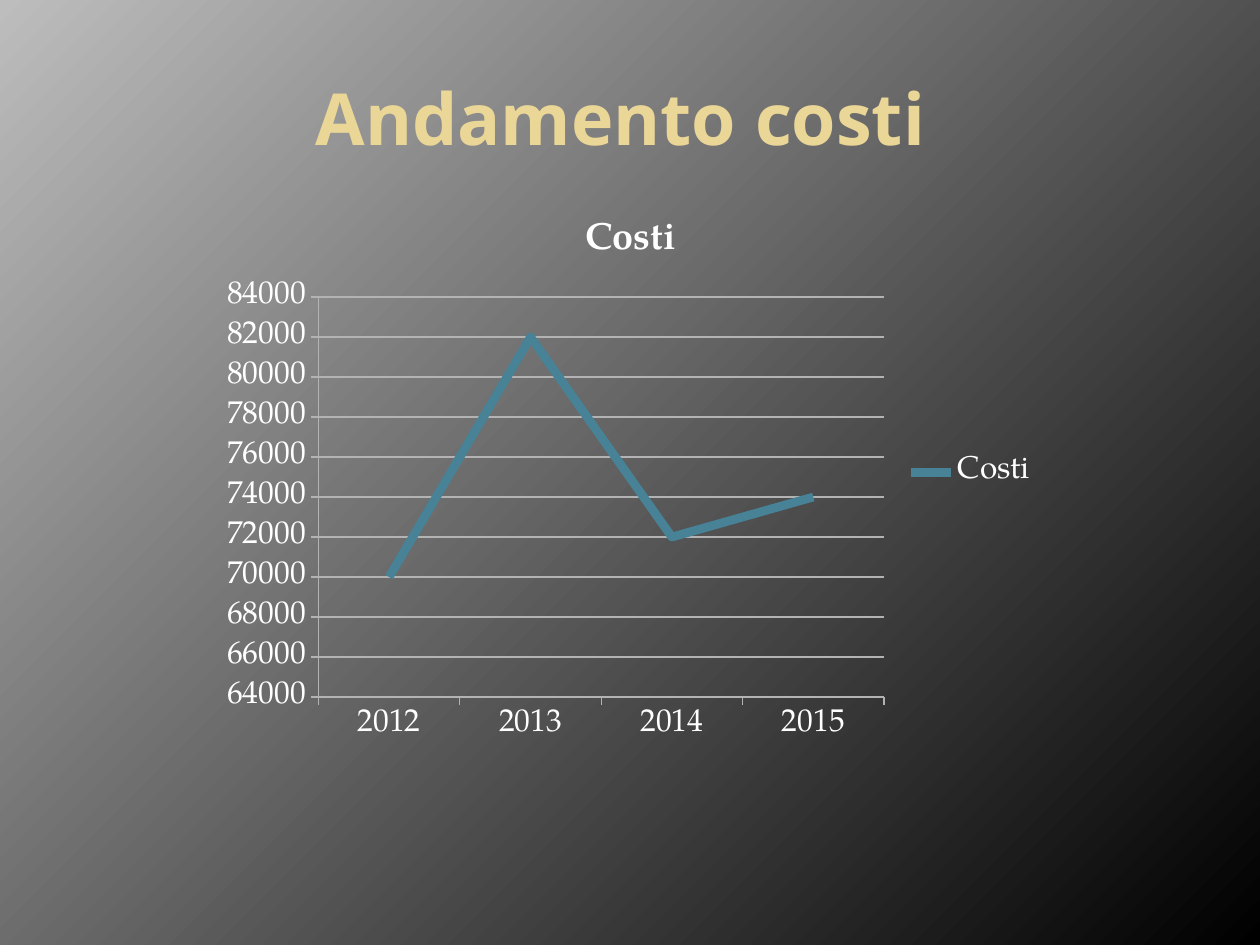
from pptx import Presentation
from pptx.chart.data import CategoryChartData
from pptx.dml.color import RGBColor
from pptx.enum.chart import XL_CHART_TYPE as ChartType
from pptx.enum.chart import XL_LEGEND_POSITION as LegendPos
from pptx.enum.chart import XL_TICK_MARK as Tick
from pptx.enum.text import MSO_ANCHOR, PP_ALIGN
from pptx.util import Inches, Pt


def rgb(value):
    """Turn a hex string into a colour."""
    return RGBColor.from_string(value)


class CostSlide:
    """Hold the style and the current slide."""

    HEAD_FONT, BODY_FONT = "Noto Sans", "TeX Gyre Pagella"
    GOLD, WHITE, TEAL, GREY = "EAD696", "FFFFFF", "488296", "B3B3B3"

    def __init__(self, prs):
        """Add a slide that has only a title."""
        self.s = prs.slides.add_slide(prs.slide_layouts[5])

    def background(self, start, end):
        """Shade the slide from the top left to the bottom right."""
        fill = self.s.background.fill
        fill.gradient()
        fill.gradient_angle = 315
        for stop, color, pos in zip(fill.gradient_stops, (start, end), (0, 1)):
            stop.color.rgb = rgb(color)
            stop.position = pos

    def style(self, font, name, size, color, bold=False):
        """Apply one text style to a font."""
        font.name, font.size, font.bold = name, Pt(size), bold
        font.color.rgb = rgb(color)

    def title(self, text, x, y, w, h):
        """Fill and place the title placeholder."""
        sp = self.s.shapes.title
        sp.left, sp.top, sp.width, sp.height = map(Inches, (x, y, w, h))
        tf = sp.text_frame
        tf.text = text
        tf.word_wrap = True
        tf.vertical_anchor = MSO_ANCHOR.MIDDLE
        p = tf.paragraphs[0]
        p.alignment = PP_ALIGN.CENTER
        self.style(p.runs[0].font, self.HEAD_FONT, 41, self.GOLD, True)

    def line_chart(self, name, cats, vals, x, y, w, h):
        """Add a line chart with a title and a legend."""
        data = CategoryChartData()
        data.categories = cats
        data.add_series(name, vals)
        chart = self.s.shapes.add_chart(
            ChartType.LINE_STACKED, *map(Inches, (x, y, w, h)), data).chart
        self.style(chart.font, self.BODY_FONT, 18, self.WHITE)

        chart.has_title = True
        tf = chart.chart_title.text_frame
        tf.text = name
        self.style(tf.paragraphs[0].runs[0].font, self.BODY_FONT, 21.6,
                   self.WHITE, True)
        chart.chart_title.include_in_layout = False

        chart.has_legend = True
        chart.legend.position = LegendPos.RIGHT
        chart.legend.include_in_layout = False

        plot = chart.plots[0]
        plot.vary_by_categories = False
        series = plot.series[0]
        series.smooth = False
        series.format.line.color.rgb = rgb(self.TEAL)
        series.format.line.width = Pt(5)

        value_axis = chart.value_axis
        value_axis.minimum_scale, value_axis.maximum_scale = 64000, 84000
        value_axis.major_unit = 2000
        value_axis.has_major_gridlines = True
        for axis in (chart.category_axis, value_axis):
            axis.major_tick_mark = Tick.OUTSIDE
        for part in (chart.category_axis, value_axis,
                     value_axis.major_gridlines):
            part.format.line.color.rgb = rgb(self.GREY)
            part.format.line.width = Pt(0.75)


def main():
    """Build and save the slide."""
    prs = Presentation()
    prs.slide_width, prs.slide_height = Inches(10), Inches(7.5)
    slide = CostSlide(prs)
    slide.background("BDBDBD", "000000")
    slide.title("Andamento costi ", 0.5, 0.3, 9, 1.25)
    slide.line_chart("Costi", ["2012", "2013", "2014", "2015"],
                     [70000, 82000, 72000, 74000], 1.67, 1.53, 6.67, 4.44)
    prs.save("out.pptx")


if __name__ == "__main__":
    main()
